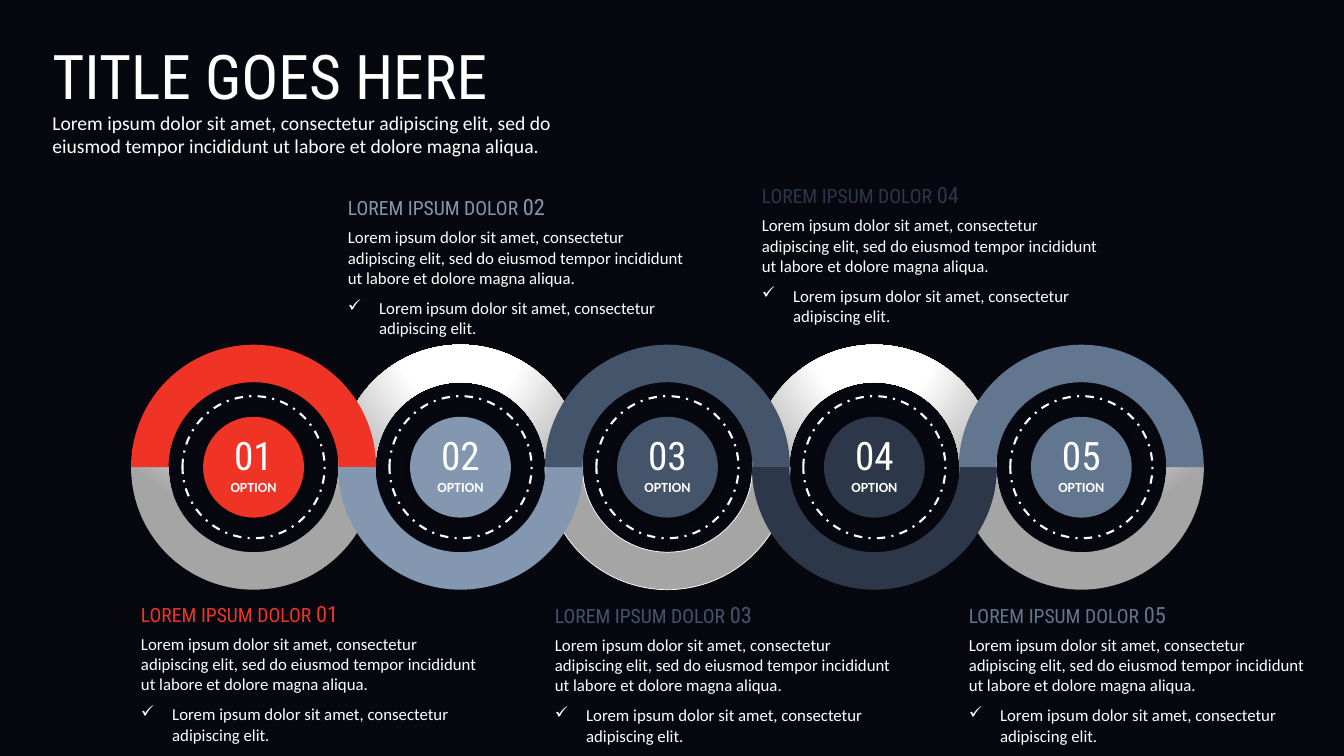
"""Build a slide with five linked option rings and their captions."""
from lxml.etree import fromstring
from pptx import Presentation
from pptx.dml.color import RGBColor as RGB
from pptx.enum.dml import MSO_LINE
from pptx.enum.shapes import MSO_SHAPE as SHAPE
from pptx.enum.text import MSO_ANCHOR, MSO_AUTO_SIZE as FIT, PP_ALIGN
from pptx.oxml.ns import nsdecls, qn
from pptx.util import Inches as In, Pt

C = {"back": "07080F", "white": "FFFFFF", "grey": "A5A5A5", "red": "EF3425",
     "sky": "8397B1", "slate": "44546B", "navy": "2C3749", "steel": "62768F"}
HEAD, BODY = "Roboto Condensed", "Calibri"
LOREM = "Lorem ipsum dolor sit amet, consectetur adipiscing elit"
LONG = LOREM + ", sed do eiusmod tempor incididunt ut labore et dolore magna aliqua."

LEFT, PITCH, RING, DASH, DISK = 1.3, 2.0525, 2.43, 1.41, 1.0
MID_Y = 3.42 + RING / 2
OPTIONS = [("red", 5.9), ("sky", 1.87), ("slate", 5.91), ("navy", 1.75), ("steel", 5.91)]

GRADIENT = f"""<a:gradFill rotWithShape="0" {nsdecls("a")}><a:gsLst>
<a:gs pos="0"><a:srgbClr val="{C['white']}"/></a:gs>
<a:gs pos="35000"><a:srgbClr val="{C['white']}"/></a:gs>
<a:gs pos="100000"><a:srgbClr val="{C['grey']}"/></a:gs></a:gsLst>
<a:path path="circle"><a:fillToRect l="50000" t="-80000" r="50000" b="180000"/></a:path>
</a:gradFill>"""
SHADOW = f"""<a:effectLst {nsdecls("a")}>
<a:outerShdw blurRad="57150" dist="33020" dir="3180000" algn="tl" rotWithShape="0">
<a:srgbClr val="000000"><a:alpha val="30000"/></a:srgbClr></a:outerShdw></a:effectLst>"""


def add_run(p, text, size, font=BODY, color="white", bold=False):
    r = p.add_run()
    r.text = text
    r.font.size, r.font.name, r.font.bold = Pt(size), font, bold
    r.font.color.rgb = RGB.from_string(C[color])


def add_round(kind, mid_x, size, color=None):
    sp = s.shapes.add_shape(kind, In(mid_x - size / 2), In(MID_Y - size / 2), In(size), In(size))
    sp.shadow.inherit = False
    sp.line.fill.background()
    if color:
        sp.fill.solid()
        sp.fill.fore_color.rgb = RGB.from_string(C[color])
    else:
        sp.fill.background()
    return sp


prs = Presentation()
prs.slide_width, prs.slide_height = In(13.33), In(7.5)
s = prs.slides.add_slide(prs.slide_layouts[5])
s.background.fill.solid()
s.background.fill.fore_color.rgb = RGB.from_string(C["back"])

title = s.shapes.title
title.left, title.top, title.width, title.height = In(0.42), In(0.33), In(5.81), In(0.82)
tf = title.text_frame
tf.auto_size, tf.vertical_anchor = FIT.NONE, MSO_ANCHOR.TOP
tf.paragraphs[0].alignment = PP_ALIGN.LEFT
add_run(tf.paragraphs[0], "TITLE GOES HERE", 44, HEAD)

tf = s.shapes.add_textbox(In(0.42), In(1.05), In(5.81), In(0.59)).text_frame
tf.word_wrap = True
add_run(tf.paragraphs[0], LONG, 14)

centres = [LEFT + RING / 2 + i * PITCH for i in range(len(OPTIONS))]

for coloured in (False, True):
    for i, (color, top) in enumerate(OPTIONS):
        sp = add_round(SHAPE.BLOCK_ARC, centres[i], RING, color if coloured else None)
        for k, value in enumerate((108, 0, 0.153)):
            sp.adjustments[k] = value
        sp.rotation = 180 if coloured == (i % 2 == 1) else 0
        if not coloured:
            pr = sp.fill._xPr
            pr.replace(pr.find(qn("a:noFill")), fromstring(GRADIENT))
            if color == "slate":
                sp.line.color.rgb = RGB.from_string(C["white"])
                sp.line.width = Pt(0.5)

for i, (color, top) in enumerate(OPTIONS):
    number = f"{i + 1:02}"

    dash = add_round(SHAPE.OVAL, centres[i], DASH)
    dash.line.color.rgb = RGB.from_string(C["white"])
    dash.line.width, dash.line.dash_style = Pt(1.5), MSO_LINE.DASH_DOT

    pr = add_round(SHAPE.OVAL, centres[i], DISK, color).fill._xPr
    pr.replace(pr.find(qn("a:effectLst")), fromstring(SHADOW))

    tf = s.shapes.add_textbox(In(centres[i] - 0.365), In(4.23), In(0.73), In(0.74)).text_frame
    tf.word_wrap, tf.auto_size = True, FIT.SHAPE_TO_FIT_TEXT
    add_run(tf.paragraphs[0], number, 28, HEAD)
    add_run(tf.add_paragraph(), "OPTION", 10, bold=True)
    for p in tf.paragraphs:
        p.alignment = PP_ALIGN.CENTER

    tf = s.shapes.add_textbox(In(LEFT + i * PITCH), In(top), In(3.58), In(1.55)).text_frame
    tf.word_wrap, tf.auto_size = True, FIT.SHAPE_TO_FIT_TEXT
    add_run(tf.paragraphs[0], "LOREM IPSUM DOLOR ", 14, HEAD, color)
    add_run(tf.paragraphs[0], number, 16, HEAD, color)
    p = tf.add_paragraph()
    p.space_before = Pt(4.9)
    add_run(p, LONG, 12)
    p = tf.add_paragraph()
    p.space_before = Pt(7.3)
    pPr = p._p.get_or_add_pPr()
    pPr.set("marL", str(In(0.31)))
    pPr.set("indent", str(-In(0.31)))
    pPr.append(fromstring(f'<a:buChar {nsdecls("a")} char="✓"/>'))
    add_run(p, LOREM + ".", 12)

prs.save("out.pptx")
